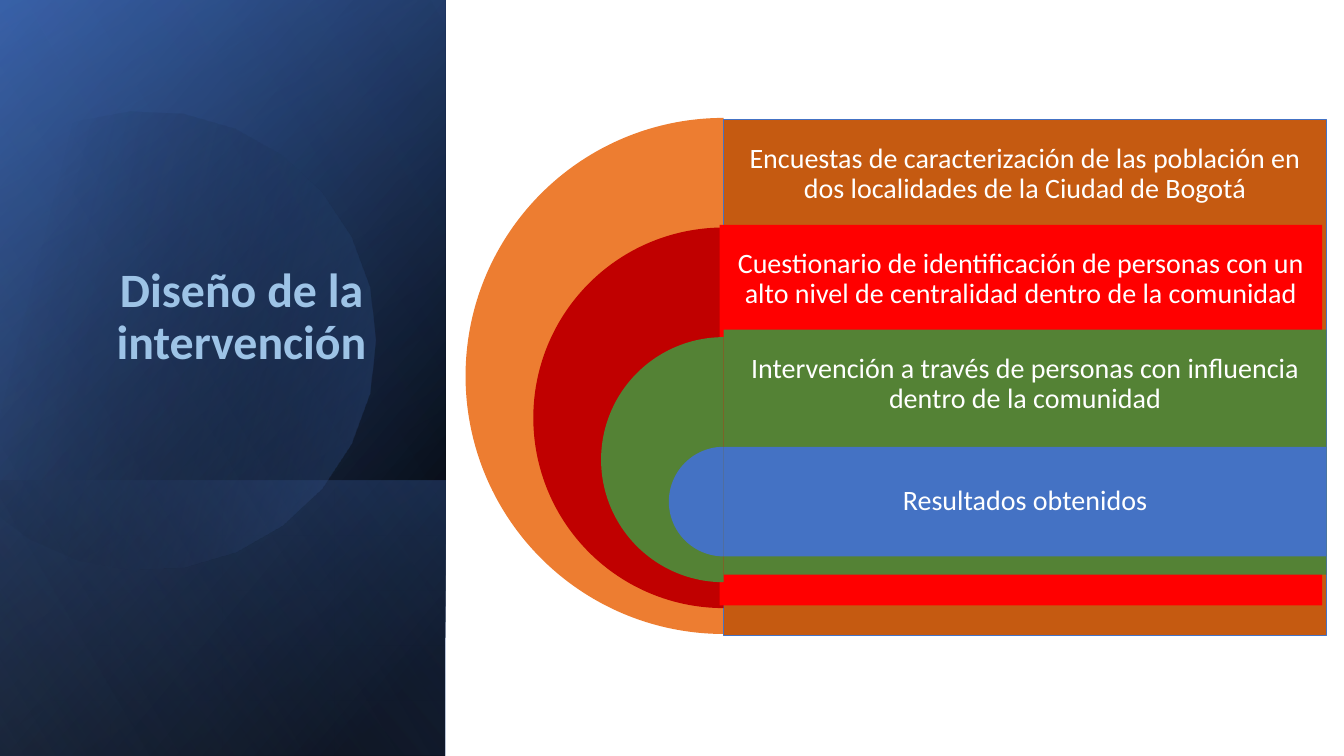
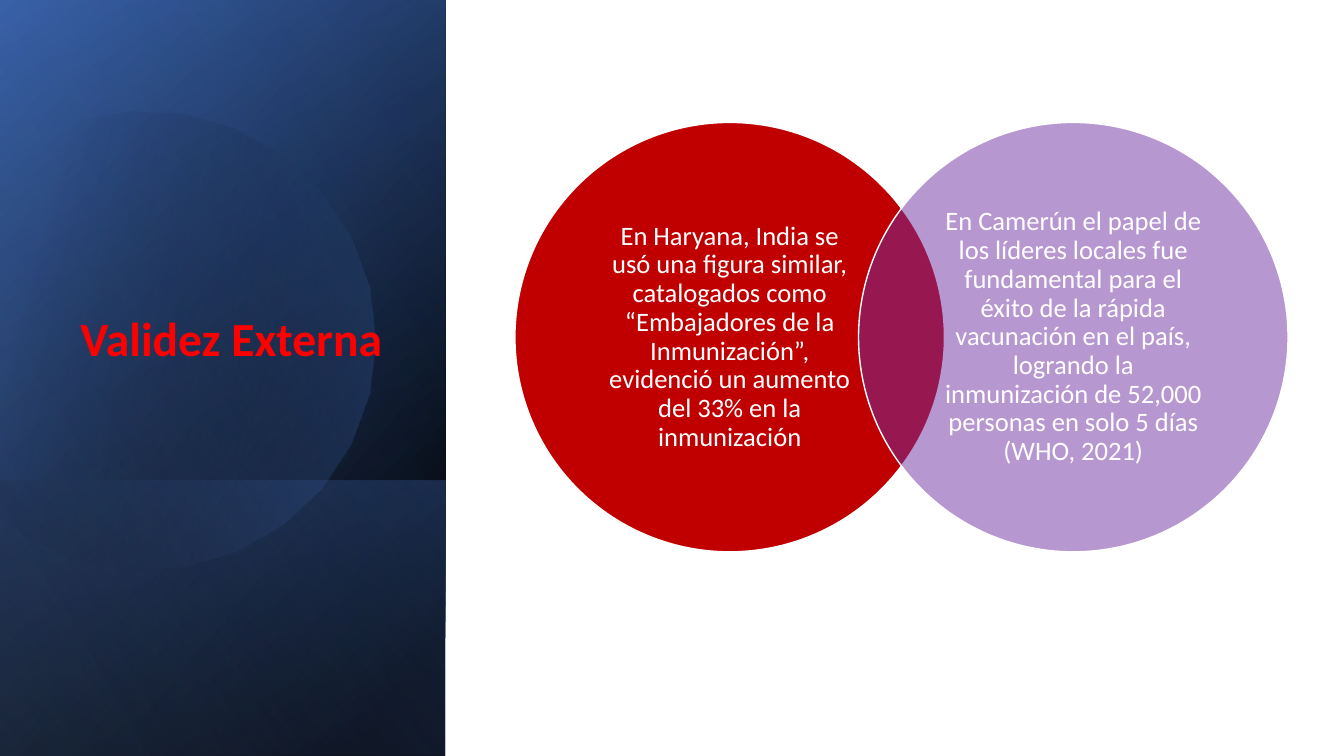
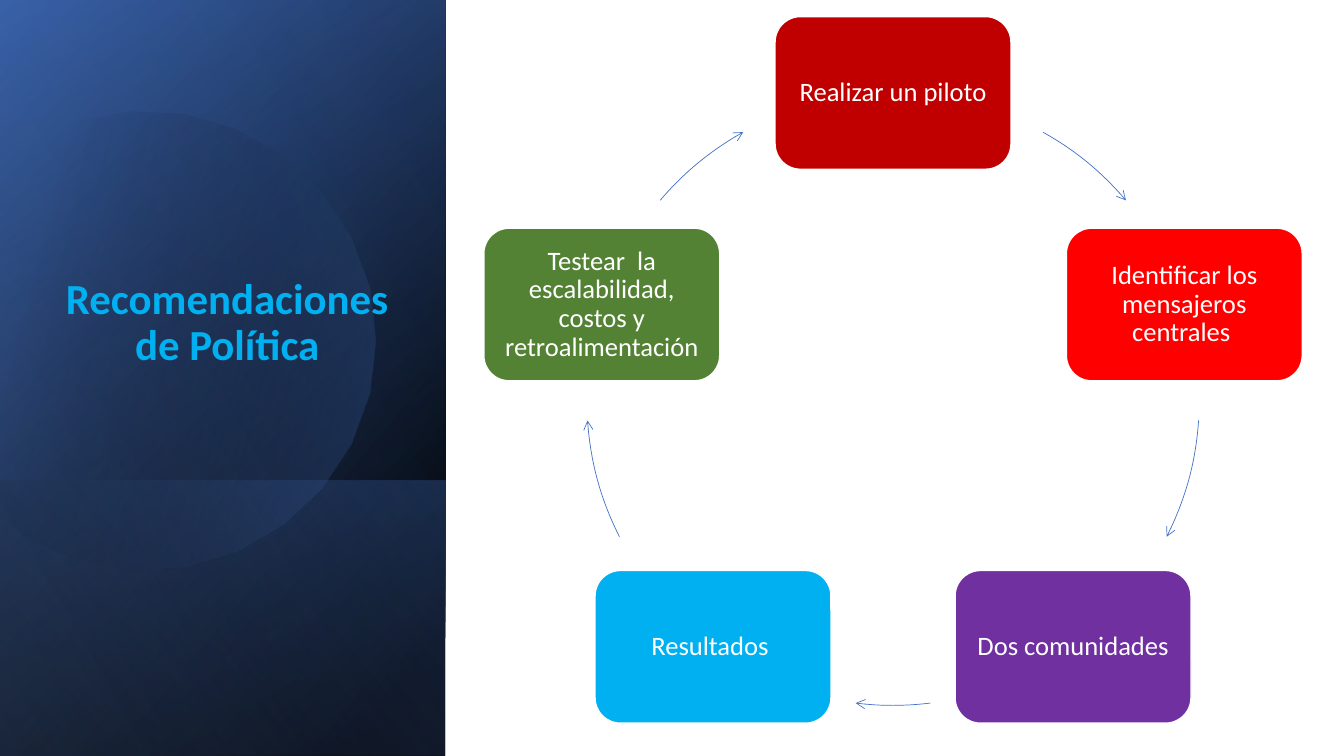
from math import cos, radians, sin

from lxml.etree import SubElement
from pptx import Presentation
from pptx.dml.color import RGBColor
from pptx.enum.shapes import MSO_SHAPE
from pptx.enum.text import MSO_ANCHOR, PP_ALIGN
from pptx.oxml.ns import qn
from pptx.util import Inches, Pt

WIDTH, HEIGHT = 13.33, 7.5
UNIT = HEIGHT / 100  # side of one cell of the square layout grid, in inches
PANEL_WIDTH = 58.9
LOWER_PANEL_HEIGHT = 36.5
FONT = "Calibri"
COLORS = {
    "white": "FFFFFF",
    "black": "000000",
    "navy": "2F5597",
    "blue": "4472C4",
    "pale blue": "8FAADC",
    "title blue": "9DC3E6",
    "sky": "00B0F0",
    "orange": "ED7D31",
    "rust": "C55A11",
    "crimson": "C00000",
    "red": "FF0000",
    "green": "548235",
    "purple": "7030A0",
}


def grid(cells):
    return Inches(cells * UNIT)


def rgb(color):
    return RGBColor.from_string(COLORS[color])


def style_shape(shape, fill=None, line=None, line_width=1):
    shape.shadow.inherit = False
    if fill:
        shape.fill.solid()
        shape.fill.fore_color.rgb = rgb(fill)
    else:
        shape.fill.background()
    if line:
        shape.line.color.rgb = rgb(line)
        shape.line.width = Pt(line_width)
    else:
        shape.line.fill.background()


def add_preset(slide, preset, left, top, width, height, **style):
    shape = slide.shapes.add_shape(
        preset, grid(left), grid(top), grid(width), grid(height))
    style_shape(shape, **style)
    return shape


def set_angles(shape, start, end):
    """Set the clockwise start and end angles, in degrees, of a pie or an arc."""
    for index, angle in enumerate((start, end)):
        shape.adjustments[index] = angle % 360 * 0.6


def set_gradient(shape, angle, *stops):
    """Fill with stops of (position, colour, opacity), all in percent."""
    properties = shape.element.spPr
    gradient = properties.makeelement(qn("a:gradFill"), {"rotWithShape": "1"})
    stop_list = SubElement(gradient, qn("a:gsLst"))
    for position, color, opacity in stops:
        stop = SubElement(stop_list, qn("a:gs"), pos=str(position * 1000))
        stop_color = SubElement(stop, qn("a:srgbClr"), val=COLORS[color])
        SubElement(stop_color, qn("a:alpha"), val=str(opacity * 1000))
    SubElement(gradient, qn("a:lin"), ang=str(angle * 60000), scaled="0")
    properties.replace(properties.find(qn("a:noFill")), gradient)


def set_opacity(shape, percent):
    color = shape.element.spPr.find(qn("a:solidFill")).find(qn("a:srgbClr"))
    SubElement(color, qn("a:alpha"), val=str(percent * 1000))


def write_text(shape, text, size, color="white", bold=False,
               anchor=MSO_ANCHOR.MIDDLE, insets=(0.08, 0.08, 0.08, 0.08)):
    """Write one centred paragraph; insets are left, top, right, bottom inches."""
    frame = shape.text_frame
    frame.word_wrap = True
    frame.vertical_anchor = anchor
    (frame.margin_left, frame.margin_top,
     frame.margin_right, frame.margin_bottom) = map(Inches, insets)
    paragraph = frame.paragraphs[0]
    paragraph.alignment = PP_ALIGN.CENTER
    paragraph.line_spacing = 0.9
    run = paragraph.add_run()
    run.text = text
    run.font.name = FONT
    run.font.size = Pt(size)
    run.font.bold = bold
    run.font.color.rgb = rgb(color)


def add_panel_layer(slide, height, angle, *stops):
    """Add a gradient rectangle, turned and flipped, resting on the slide's foot."""
    left = (PANEL_WIDTH - height) / 2
    top = 100 - (height + PANEL_WIDTH) / 2
    layer = add_preset(slide, MSO_SHAPE.RECTANGLE, left, top, height, PANEL_WIDTH)
    layer.rotation = 90
    layer.element.spPr.xfrm.set("flipH", "1")
    set_gradient(layer, angle, *stops)


def add_panel_disc(slide):
    """Add the large disc that is cut off by the slide's left edge."""
    center_x, center_y, radius = 19.2, 44.5, 30.4
    first_angle, last_angle, segments = -118, 150, 20
    step = (last_angle - first_angle) / segments
    angles = [radians(first_angle + step * index) for index in range(segments + 1)]
    points = [(grid(center_x + radius * cos(angle)),
               grid(center_y + radius * sin(angle))) for angle in angles]
    builder = slide.shapes.build_freeform(*points[0], scale=1.0)
    builder.add_line_segments(points[1:], close=True)
    disc = builder.convert_to_shape()
    style_shape(disc)
    disc.rotation = -16.1
    set_gradient(disc, 30, (29, "black", 0), (100, "blue", 43))


def add_titled_slide(presentation, title, left, width, bottom, size, color):
    slide = presentation.slides.add_slide(presentation.slide_layouts[6])
    add_preset(slide, MSO_SHAPE.RECTANGLE, 0, 0, WIDTH / UNIT, 100, fill="white")
    add_panel_layer(slide, 100, 50, (8, "black", 100), (100, "navy", 100))
    add_panel_layer(slide, 100, 30, (0, "black", 0), (99, "blue", 46))
    add_panel_layer(slide, LOWER_PANEL_HEIGHT, 130,
                    (2, "blue", 29), (100, "black", 30))
    add_panel_disc(slide)
    add_panel_layer(slide, 100, 120, (0, "black", 0), (99, "pale blue", 11))
    top = 33
    box = slide.shapes.add_textbox(
        grid(left), grid(top), grid(width), grid(bottom - top))
    write_text(box, title, size, color, bold=True,
               anchor=MSO_ANCHOR.BOTTOM, insets=(0, 0, 0, 0))
    return slide


def add_nested_bands(slide, bands):
    """Add half discs, each nested in the one before, with a text band each."""
    center_x, first_top, row, diameter_step = 95.7, 15.6, 14.5, 17.92
    band_width, inset = 79.7, 0.08
    for index, (text, disc_color, band_color, line, left, top) in enumerate(bands):
        diameter = row + diameter_step * (len(bands) - 1 - index)
        disc = add_preset(slide, MSO_SHAPE.PIE, center_x - diameter / 2,
                          first_top + row * index, diameter, diameter,
                          fill=disc_color)
        set_angles(disc, 90, 270)
        band = add_preset(slide, MSO_SHAPE.RECTANGLE, left, top, band_width,
                          diameter, fill=band_color, line=line, line_width=0.75)
        below_row = (diameter - row) * UNIT + inset
        write_text(band, text, 20, insets=(inset, inset, inset, below_row))


def add_overlapping_circles(slide, circles):
    left, top, diameter = 68.1, 16.2, 56.8
    for index, (text, color, opacity) in enumerate(circles):
        circle = add_preset(slide, MSO_SHAPE.OVAL, left + 0.8 * diameter * index,
                            top, diameter, diameter, fill=color, line="white")
        if opacity < 100:
            set_opacity(circle, opacity)
        write_text(circle, text, 19, insets=(0.23, 0.03, 0.23, 0.03))


def add_cycle(slide, steps, arrow_angles):
    """Place steps evenly round a circle, with an arc arrow after each one."""
    center_x, center_y, radius = 118.1, 52.8, 40.5
    step_width, step_height = 31.2, 20.2
    for index, ((text, color), angles) in enumerate(zip(steps, arrow_angles)):
        angle = radians(360 / len(steps) * index - 90)
        step = add_preset(slide, MSO_SHAPE.ROUNDED_RECTANGLE,
                          center_x + radius * cos(angle) - step_width / 2,
                          center_y + radius * sin(angle) - step_height / 2,
                          step_width, step_height, fill=color, line="white")
        write_text(step, text, 19)
        arrow = add_preset(slide, MSO_SHAPE.ARC, center_x - radius,
                           center_y - radius, 2 * radius, 2 * radius,
                           line="blue", line_width=0.5)
        set_angles(arrow, *angles)
        SubElement(arrow.element.spPr.find(qn("a:ln")), qn("a:tailEnd"),
                   type="arrow")


def main():
    presentation = Presentation()
    presentation.slide_width = Inches(WIDTH)
    presentation.slide_height = Inches(HEIGHT)

    design = add_titled_slide(presentation, "Diseño de la intervención",
                              5, 53.9, 48.9, 34.2, "title blue")
    add_nested_bands(design, [
        ("Encuestas de caracterización de las población en dos localidades "
         "de la Ciudad de Bogotá", "orange", "rust", "blue", 95.7, 15.82),
        ("Cuestionario de identificación de personas con un alto nivel de "
         "centralidad dentro de la comunidad", "crimson", "red", None, 95.15, 29.75),
        ("Intervención a través de personas con influencia dentro de la "
         "comunidad", "green", "green", None, 95.7, 43.6),
        ("Resultados obtenidos", "blue", "blue", None, 95.7, 59.1),
    ])

    validity = add_titled_slide(presentation, "Validez Externa",
                                3.35, 54.5, 48.55, 34, "red")
    add_overlapping_circles(validity, [
        ("En Haryana, India se usó una figura similar, catalogados como "
         "“Embajadores de la Inmunización”, evidenció un aumento del 33% en la "
         "inmunización", "crimson", 100),
        ("En Camerún el papel de los líderes locales fue fundamental para el "
         "éxito de la rápida vacunación en el país, logrando la inmunización de "
         "52,000 personas en solo 5 días (WHO, 2021)", "purple", 50),
    ])

    policy = add_titled_slide(presentation, "Recomendaciones de Política",
                              7.4, 45.3, 48.95, 30.6, "sky")
    add_cycle(policy, [
        ("Realizar un piloto", "crimson"),
        ("Identificar los mensajeros centrales ", "red"),
        ("Dos comunidades", "purple"),
        ("Resultados ", "sky"),
        ("Testear  la escalabilidad, costos y retroalimentación", "green"),
    ], [(-60.7, -40.5), (4, 26.7), (83, 97), (153.3, 176), (220.5, 240.7)])

    presentation.save("out.pptx")


if __name__ == "__main__":
    main()
